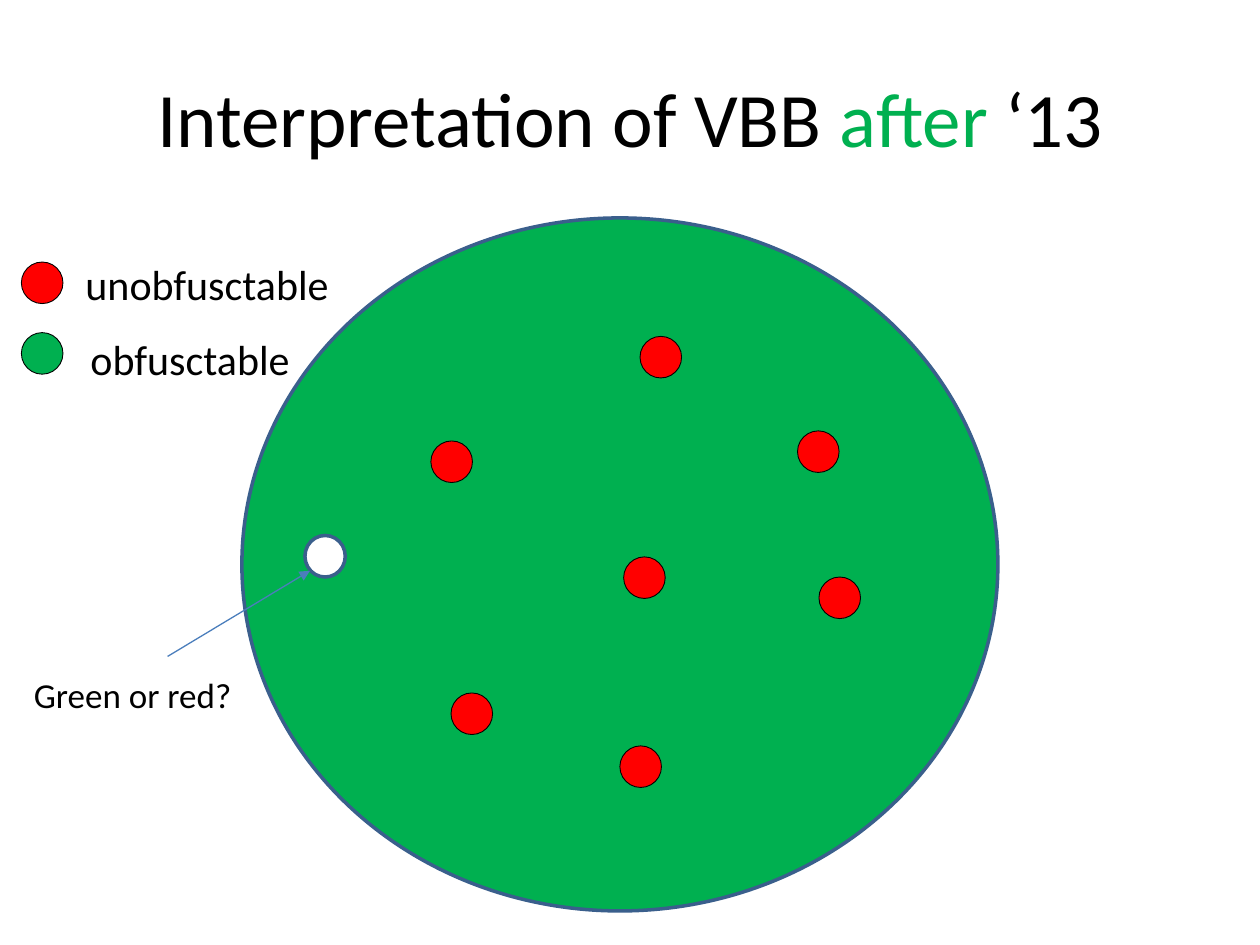
from dataclasses import dataclass

from lxml import etree
from pptx import Presentation
from pptx import util as u
from pptx.dml.color import RGBColor
from pptx.enum import shapes, text
from pptx.oxml import ns


@dataclass(frozen=True)
class Theme:
    font: str = "Calibri"
    ink: str = "000000"
    paper: str = "FFFFFF"
    green: str = "00B050"
    red: str = "FF0000"
    outline: str = "3A5F8C"
    arrow: str = "4B7EBC"
    title_size: int = 44
    legend_size: int = 24
    question_size: int = 20


THEME = Theme()
DOT = 0.33


def inches(*lengths):
    return [u.Inches(length) for length in lengths]


def write(paragraph, words, size, color=THEME.ink):
    run = paragraph.add_run()
    run.text = words
    formats = {"name": THEME.font, "size": u.Pt(size)}
    for key, value in formats.items():
        setattr(run.font, key, value)
    run.font.color.rgb = RGBColor.from_string(color)


def add_label(slide, box, words, size):
    frame = slide.shapes.add_textbox(*inches(*box)).text_frame
    formats = {"word_wrap": False, "auto_size": text.MSO_AUTO_SIZE.SHAPE_TO_FIT_TEXT}
    for key, value in formats.items():
        setattr(frame, key, value)
    write(frame.paragraphs[0], words, size)


def add_ellipse(slide, box, fill, line=THEME.ink, weight=0.5):
    ellipse = slide.shapes.add_shape(shapes.MSO_SHAPE.OVAL, *inches(*box))
    ellipse.shadow.inherit = False
    ellipse.fill.solid()
    ellipse.fill.fore_color.rgb = RGBColor.from_string(fill)
    ellipse.line.color.rgb = RGBColor.from_string(line)
    ellipse.line.width = u.Pt(weight)


def add_title(slide, box):
    title = slide.shapes.title
    for side, length in zip(("left", "top", "width", "height"), inches(*box)):
        setattr(title, side, length)
    title.text_frame.vertical_anchor = text.MSO_ANCHOR.MIDDLE
    heading = title.text_frame.paragraphs[0]
    heading.alignment = text.PP_ALIGN.CENTER
    for words, color in (
        ("Interpretation of VBB ", THEME.ink),
        ("after", THEME.green),
        (" ‘13", THEME.ink),
    ):
        write(heading, words, THEME.title_size, color)


def add_function_space(slide, box):
    """Green disc of functions, with red exceptions and one open case."""
    left, top = box[:2]
    add_ellipse(slide, box, THEME.green, THEME.outline, 2)

    # Red exceptions, as offsets from the corner of the disc's box
    exceptions = [(1.5, 1.77), (1.66, 3.77), (4.58, 2.85), (3.16, 0.94),
                  (3.03, 2.69), (3, 4.19), (4.41, 1.69)]
    for x, y in exceptions:
        add_ellipse(slide, (left + x, top + y, DOT, DOT), THEME.red)

    # Open case
    add_ellipse(slide, (left + 0.5, top + 2.52, 0.32, DOT),
                THEME.paper, THEME.outline, 2)


def add_legend(slide, box):
    left, top = box[:2]
    entries = [
        (THEME.red, 0.08, "unobfusctable", (0.41, 0, 2.15, 0.5)),
        (THEME.green, 0.64, "obfusctable", (0.45, 0.6, 1.8, 0.5)),
    ]
    for color, dot_y, words, (x, y, width, height) in entries:
        add_ellipse(slide, (left, top + dot_y, DOT, DOT), color)
        add_label(slide, (left + x, top + y, width, height),
                  words, THEME.legend_size)


def add_question(slide, box, target):
    """Question with an arrow to the open case."""
    left, top = box[:2]
    start = (left + 1.16, top - 0.09)
    arrow = slide.shapes.add_connector(
        shapes.MSO_CONNECTOR.STRAIGHT, *inches(*start, *target))
    arrow.line.color.rgb = RGBColor.from_string(THEME.arrow)
    arrow.line.width = u.Pt(0.75)
    etree.SubElement(arrow.line._get_or_add_ln(), ns.qn("a:tailEnd"), type="triangle")
    etree.SubElement(arrow._element.spPr, ns.qn("a:effectLst"))
    add_label(slide, box, "Green or red?", THEME.question_size)


def main():
    deck = Presentation()
    deck.slide_width, deck.slide_height = inches(10, 7.5)
    slide = deck.slides.add_slide(deck.slide_layouts[5])
    add_title(slide, (0.5, 0.3, 9, 1.25))
    add_function_space(slide, (1.92, 1.73, 6, 5.5))
    add_legend(slide, (0.17, 2, 2.56, 1.1))
    add_question(slide, (0.17, 5.3, 1.78, 0.44), target=(2.46, 4.53))
    deck.save("out.pptx")


if __name__ == "__main__":
    main()
